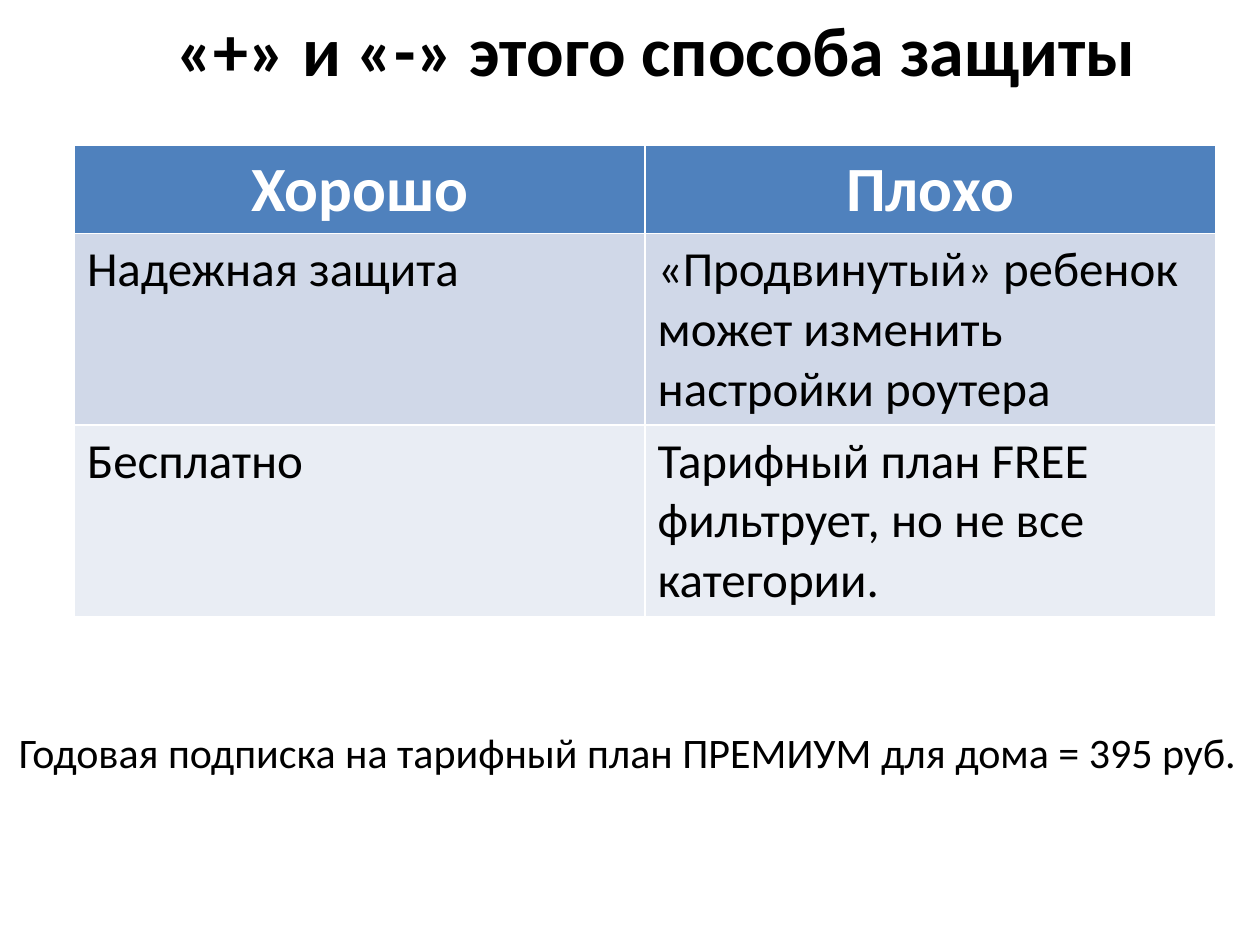
from pptx import Presentation
from pptx.dml.color import RGBColor
from pptx.enum.text import MSO_ANCHOR, MSO_AUTO_SIZE, PP_ALIGN
from pptx.util import Cm, Pt

LEFT, CENTER = PP_ALIGN.LEFT, PP_ALIGN.CENTER
TOP = MSO_ANCHOR.TOP
GROW = MSO_AUTO_SIZE.SHAPE_TO_FIT_TEXT
TITLE_ONLY = 5

ROWS = [
    ("Хорошо", "Плохо"),
    ("Надежная защита", "«Продвинутый» ребенок может изменить настройки роутера"),
    ("Бесплатно", "Тарифный план FREE фильтрует, но не все категории."),
]
FILLS = ["4F81BD", "D0D8E8", "E9EDF4"]
HEIGHTS = [1.78, 3.86, 3.86]


def color(code):
    return RGBColor.from_string(code)


class Page:
    """Holds the text style and the current slide."""

    font = "Calibri"
    ink = "000000"
    light = "FFFFFF"

    def __init__(self, slide):
        self.slide = slide

    def words(self, frame, text, size, bold=False, ink=ink, align=LEFT):
        frame.text = text
        para = frame.paragraphs[0]
        para.alignment = align
        style = {"name": self.font, "size": Pt(size), "bold": bold}
        font = para.runs[0].font
        for key, value in style.items():
            setattr(font, key, value)
        font.color.rgb = color(ink)

    def label(self, shape, text, size, bold=False):
        frame = shape.text_frame
        self.words(frame, text, size, bold)
        form = {"word_wrap": False, "auto_size": GROW, "vertical_anchor": TOP}
        for key, value in form.items():
            setattr(frame, key, value)

    def title(self, text, box, size):
        shape = self.slide.shapes.title
        for key, value in zip(("left", "top", "width", "height"), box):
            setattr(shape, key, Cm(value))
        self.label(shape, text, size, bold=True)

    def note(self, text, box, size):
        shape = self.slide.shapes.add_textbox(*map(Cm, box))
        self.label(shape, text, size)

    def table(self, rows, box):
        shape = self.slide.shapes.add_table(len(rows), len(rows[0]), *map(Cm, box))
        grid = shape.table
        head = {"size": 36, "bold": True, "ink": self.light, "align": CENTER}
        body = {"size": 28}
        for r, row in enumerate(rows):
            grid.rows[r].height = Cm(HEIGHTS[r])
            for c, text in enumerate(row):
                cell = grid.cell(r, c)
                cell.fill.solid()
                cell.fill.fore_color.rgb = color(FILLS[r])
                self.words(cell.text_frame, text, **(body if r else head))


def main():
    deck = Presentation()
    deck.slide_width, deck.slide_height = Cm(25.4), Cm(19.05)
    page = Page(deck.slides.add_slide(deck.slide_layouts[TITLE_ONLY]))
    page.table(ROWS, (1.5, 2.93, 23.01, sum(HEIGHTS)))
    page.title("«+» и «-» этого способа защиты", (3.3, 0, 20.04, 1.96), 40)
    page.note(
        "Годовая подписка на тарифный план ПРЕМИУМ для дома = 395 руб.",
        (0.13, 14.53, 25.27, 1.27),
        24,
    )
    deck.save("out.pptx")


if __name__ == "__main__":
    main()
